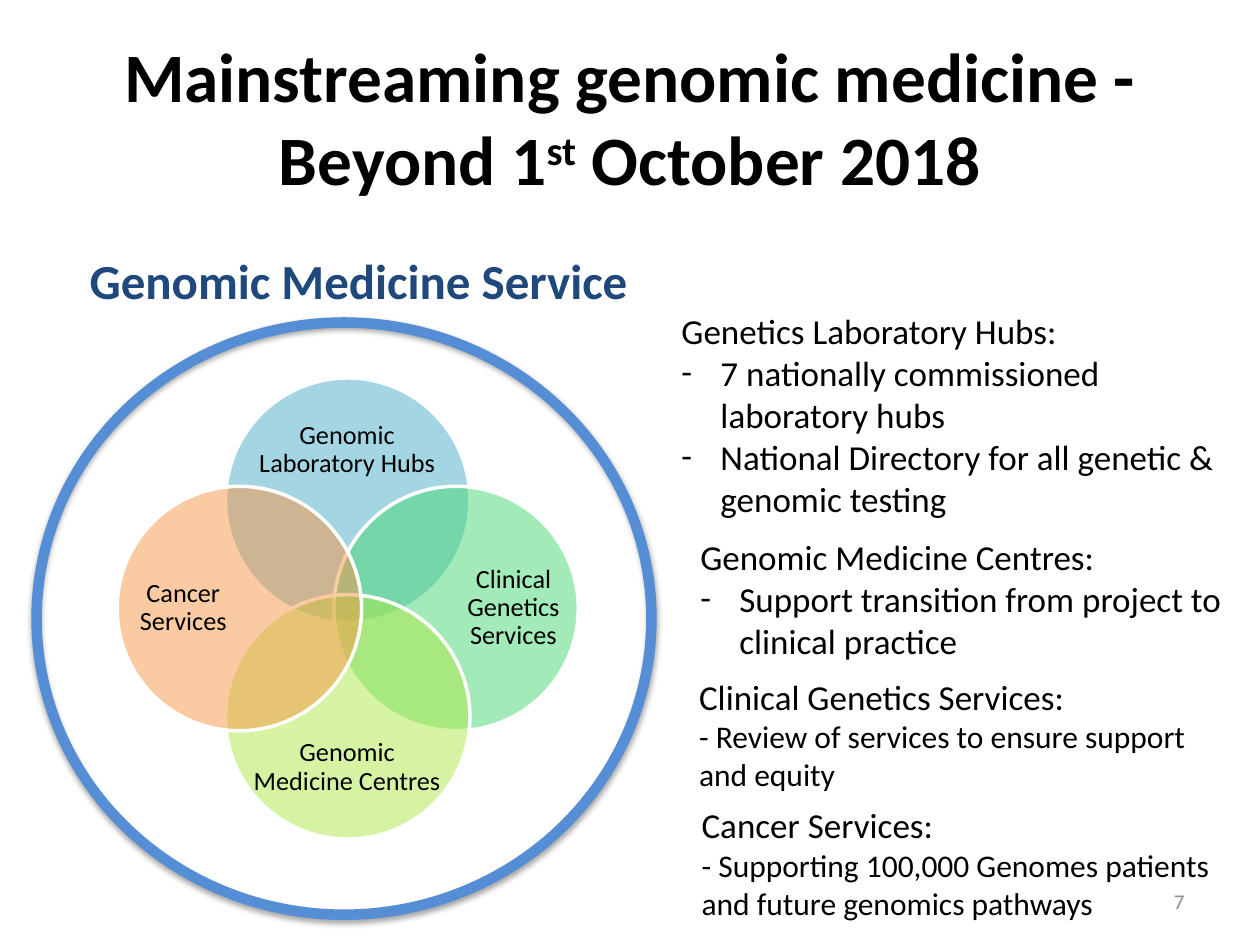
from lxml import etree
from pptx import Presentation
from pptx.dml.color import RGBColor
from pptx.enum.shapes import MSO_SHAPE
from pptx.enum.text import MSO_ANCHOR, MSO_AUTO_SIZE, PP_ALIGN
from pptx.oxml.ns import qn
from pptx.util import Inches, Pt

OVAL = MSO_SHAPE.OVAL
TOP, MIDDLE = MSO_ANCHOR.TOP, MSO_ANCHOR.MIDDLE
NO_FIT = MSO_AUTO_SIZE.NONE
LEFT, CENTER, RIGHT = PP_ALIGN.LEFT, PP_ALIGN.CENTER, PP_ALIGN.RIGHT

FONT = "Calibri"
COLORS = {
    "text": "000000", "head": "1F497D", "page": "8C8C8C", "ring": "558ED5",
    "edge": "FFFFFF", "labs": "4BACC6", "clinic": "47D872",
    "centres": "ACE946", "cancer": "F79646",
}

# Venn layout: shared centre, circle size, distance of circles from centre
MID_X, MID_Y, SIZE, STEP = 2.76, 4.83, 1.94, 0.86
# Each circle: colour, direction, label, label box
CIRCLES = [
    ("labs", (0, -1), "Genomic Laboratory Hubs", (2.01, 3.26, 1.49, 0.62)),
    ("clinic", (1, 0), "Clinical Genetics Services", (3.7, 4.08, 0.75, 1.49)),
    ("centres", (0, 1), "Genomic Medicine Centres", (2.01, 5.78, 1.49, 0.62)),
    ("cancer", (-1, 0), "Cancer Services", (1.08, 4.08, 0.75, 1.49)),
]
# Each note: box, heading, lines, whether the lines have hanging dashes
NOTES = [
    ((5.31, 2.41, 4.69, 1.78), "Genetics Laboratory Hubs:",
     ["7 nationally commissioned laboratory hubs",
      "National Directory for all genetic & genomic testing"], True),
    ((5.46, 4.2, 4.4, 1.11), "Genomic Medicine Centres:",
     ["Support transition from project to clinical practice"], True),
    ((5.45, 5.31, 4.4, 1.04), "Clinical Genetics Services:",
     ["- Review of services to ensure support and equity"], False),
    ((5.47, 6.33, 4.4, 1.04), "Cancer Services:",
     ["- Supporting 100,000 Genomes patients and future genomics pathways"],
     False),
]


def rgb(name):
    return RGBColor.from_string(COLORS[name])


def style(para, size, color="text", bold=False, align=LEFT):
    para.alignment = align
    font = para.font
    font.name, font.size, font.bold = FONT, Pt(size), bold
    font.color.rgb = rgb(color)


def add_title(slide, box, parts):
    title = slide.shapes.title
    title.left, title.top, title.width, title.height = map(Inches, box)
    frame = title.text_frame
    frame.auto_size, frame.vertical_anchor = NO_FIT, MIDDLE
    para = frame.paragraphs[0]
    for text, raised in parts:
        run = para.add_run()
        run.text = text
        if raised:
            run._r.get_or_add_rPr().set("baseline", "30000")
    style(para, 39.6, bold=True, align=CENTER)


def add_box(slide, box, anchor=TOP):
    frame = slide.shapes.add_textbox(*map(Inches, box)).text_frame
    frame.word_wrap, frame.vertical_anchor = True, anchor
    return frame


def add_label(slide, box, text, size, anchor=TOP, **look):
    frame = add_box(slide, box, anchor)
    para = frame.paragraphs[0]
    para.text = text
    style(para, size, **look)
    return frame


def add_oval(slide, box, line, width):
    oval = slide.shapes.add_shape(OVAL, *map(Inches, box))
    oval.shadow.inherit = False
    oval.line.color.rgb = rgb(line)
    oval.line.width = Pt(width)
    return oval


def add_circle(slide, color, way, text, box):
    left, top = (mid + STEP * move - SIZE / 2
                 for mid, move in zip((MID_X, MID_Y), way))
    oval = add_oval(slide, (left, top, SIZE, SIZE), "edge", 2)
    oval.fill.solid()
    oval.fill.fore_color.rgb = rgb(color)
    tint = oval.fill._xPr.find(".//" + qn("a:srgbClr"))
    etree.SubElement(tint, qn("a:alpha"), val="50000")
    # Label
    frame = add_label(slide, box, text, 15, MIDDLE, align=CENTER)
    frame.margin_left = frame.margin_right = 0
    frame.margin_top = frame.margin_bottom = 0
    frame.paragraphs[0].line_spacing = 0.9


def add_ring(slide, box):
    ring = add_oval(slide, box, "ring", 6)
    ring.fill.background()
    # Soft shadow straight below
    effects = ring._element.spPr.find(qn("a:effectLst"))
    shade = etree.SubElement(
        effects, qn("a:outerShdw"), blurRad=str(Pt(3.1)),
        dist=str(Pt(1.8)), dir="5400000", rotWithShape="0")
    tint = etree.SubElement(shade, qn("a:srgbClr"), val=COLORS["text"])
    etree.SubElement(tint, qn("a:alpha"), val="35000")


def add_dash(para):
    props = para._p.get_or_add_pPr()
    props.set("marL", str(Inches(0.31)))
    props.set("indent", str(Inches(-0.31)))
    etree.SubElement(props, qn("a:buFont"), typeface=FONT)
    etree.SubElement(props, qn("a:buChar"), char="-")


def add_note(slide, box, head, lines, dashed):
    frame = add_label(slide, box, head, 20)
    for line in lines:
        para = frame.add_paragraph()
        para.text = line
        if dashed:
            add_dash(para)
        style(para, 20 if dashed else 18)


def main():
    deck = Presentation()
    deck.slide_width, deck.slide_height = Inches(10), Inches(7.5)
    slide = deck.slides.add_slide(deck.slide_layouts[5])

    add_title(slide, (0.5, 0.3, 9, 1.25), [
        ("Mainstreaming genomic medicine - Beyond 1", False),
        ("st", True), (" October 2018", False)])

    # Venn diagram inside its ring
    for circle in CIRCLES:
        add_circle(slide, *circle)
    add_label(slide, (7.17, 6.95, 2.33, 0.4), "7", 12, MIDDLE,
              color="page", align=RIGHT)
    add_ring(slide, (0.29, 2.56, 4.88, 4.7))
    add_label(slide, (-0.58, 1.94, 6.85, 0.57), "Genomic Medicine Service",
              28, color="head", bold=True, align=CENTER)

    # Notes on the right
    for note in NOTES:
        add_note(slide, *note)
    deck.save("out.pptx")


if __name__ == "__main__":
    main()
